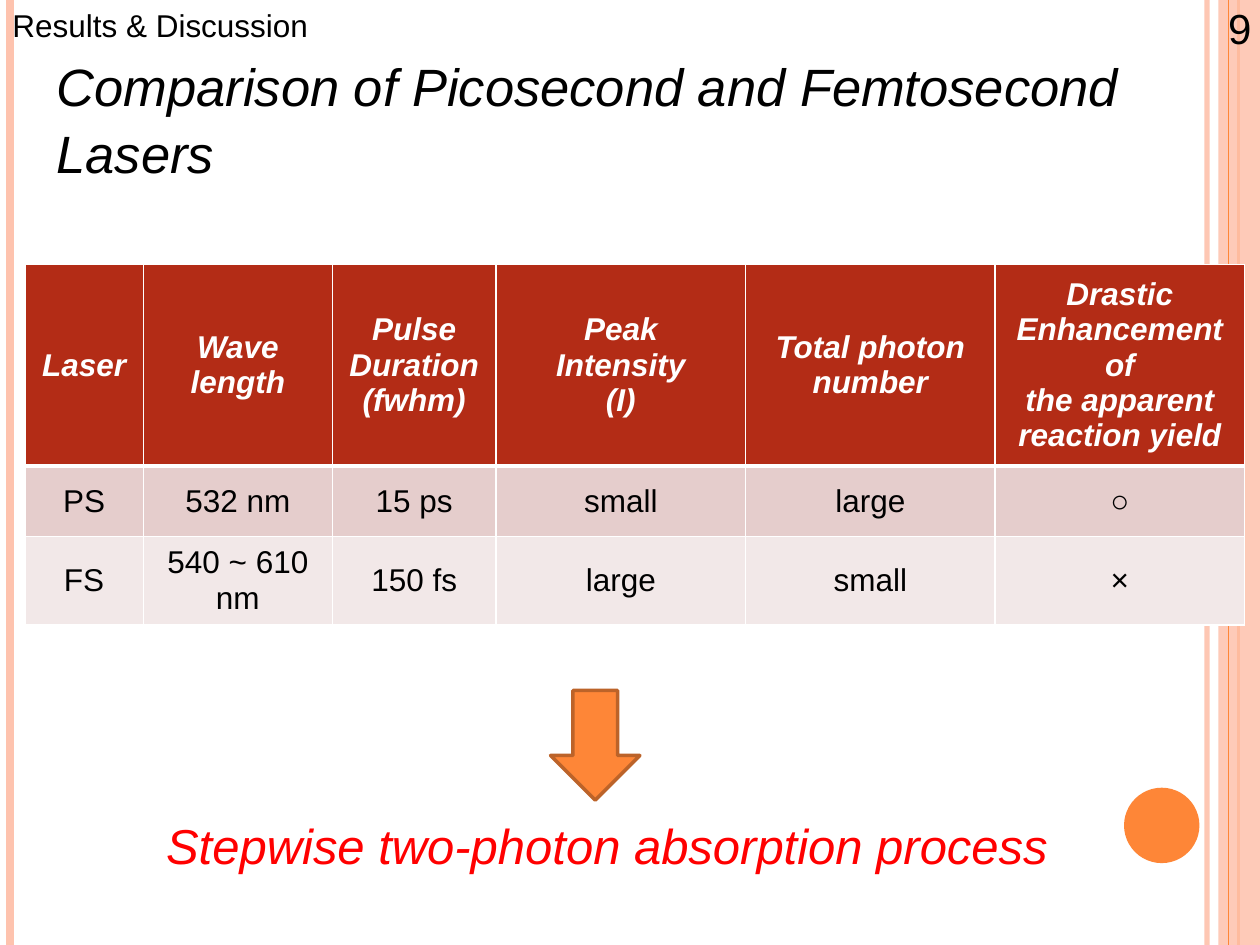
"""Build the slide comparing picosecond and femtosecond lasers."""
import pptx
import pptx.dml.color
import pptx.enum.shapes
import pptx.enum.text
import pptx.oxml
import pptx.oxml.ns
import pptx.util
from lxml import etree

Cm = pptx.util.Cm
Pt = pptx.util.Pt
SHAPES = pptx.enum.shapes.MSO_SHAPE
FONT = "Arial"
SLIDE_WIDTH, SLIDE_HEIGHT = 25.4, 19.05
COLOURS = {
    "black": "000000",
    "white": "FFFFFF",
    "red": "FF0000",
    "orange": "FE8637",
    "dark orange": "BC6329",
    "peach": "FEC3AE",
    "header": "B32C16",
    "odd row": "E5CDCC",
    "even row": "F2E8E8",
}
STRIPES = [
    (24.33, "peach", 3, 93),
    (0.2, "peach", 4.5, 100),
    (24.97, "orange", 1.5, 100),
]
COLUMN_WIDTHS = [2.39, 3.81, 3.3, 5.03, 5.03, 5.03]
ROW_HEIGHTS = [4.06, 1.42, 1.78]
ROW_FILLS = ["header", "odd row", "even row"]
LASERS = [
    ["Laser", "Wave\nlength", "Pulse\nDuration\n(fwhm)", "Peak\nIntensity\n(I)",
     "Total photon\nnumber",
     "Drastic\nEnhancement\nof\nthe apparent\nreaction yield"],
    ["PS", "532 nm", "15 ps", "small", "large", "○"],
    ["FS", "540 ~ 610 nm", "150 fs", "large", "small", "×"],
]


def rgb(name):
    return pptx.dml.color.RGBColor.from_string(COLOURS[name])


def set_alpha(element, percent):
    colour = element.find(".//" + pptx.oxml.ns.qn("a:srgbClr"))
    alpha = etree.SubElement(colour, pptx.oxml.ns.qn("a:alpha"))
    alpha.set("val", str(percent * 1000))


def format_text(text_frame, size, colour, bold=False, italic=False):
    for paragraph in text_frame.paragraphs:
        for run in paragraph.runs:
            run.font.name = FONT
            run.font.size = Pt(size)
            run.font.bold = bold
            run.font.italic = italic
            run.font.color.rgb = rgb(colour)


def add_stripe(slide, x, colour, width, opacity=100):
    connector = slide.shapes.add_connector(
        pptx.enum.shapes.MSO_CONNECTOR.STRAIGHT, Cm(x), Cm(0), Cm(x), Cm(SLIDE_HEIGHT))
    connector.line.color.rgb = rgb(colour)
    connector.line.width = Pt(width)
    properties = connector._element.spPr
    if opacity < 100:
        set_alpha(properties, opacity)
    etree.SubElement(properties, pptx.oxml.ns.qn("a:effectLst"))


def add_block(slide, preset, left, top, width, height, fill, line=None):
    shape = slide.shapes.add_shape(preset, Cm(left), Cm(top), Cm(width), Cm(height))
    shape.shadow.inherit = False
    shape.fill.solid()
    shape.fill.fore_color.rgb = rgb(fill)
    if line:
        shape.line.color.rgb = rgb(line)
        shape.line.width = Pt(2)
    else:
        shape.line.fill.background()
    return shape


def add_text(slide, text, left, top, width, height, size, colour="black",
             italic=False, spacing=None):
    text_frame = slide.shapes.add_textbox(
        Cm(left), Cm(top), Cm(width), Cm(height)).text_frame
    text_frame.word_wrap = True
    text_frame.text = text
    format_text(text_frame, size, colour, italic=italic)
    for paragraph in text_frame.paragraphs:
        paragraph.line_spacing = spacing


def set_borders(cell, **widths):
    properties = cell._tc.get_or_add_tcPr()
    for index, side in enumerate("LRTB"):
        properties.insert(index, pptx.oxml.parse_xml(
            f'<a:ln{side} {pptx.oxml.ns.nsdecls("a")} w="{Pt(widths.get(side, 1))}">'
            f'<a:solidFill><a:srgbClr val="{COLOURS["white"]}"/></a:solidFill>'
            f'</a:ln{side}>'))


def fill_cell(cell, text, fill, is_header, below_header):
    cell.text_frame.text = text
    cell.vertical_anchor = pptx.enum.text.MSO_ANCHOR.MIDDLE
    for paragraph in cell.text_frame.paragraphs:
        paragraph.alignment = pptx.enum.text.PP_ALIGN.CENTER
    format_text(cell.text_frame, 18, "white" if is_header else "black",
                bold=is_header, italic=is_header)
    cell.fill.solid()
    cell.fill.fore_color.rgb = rgb(fill)
    set_borders(cell, T=3 if below_header else 1, B=3 if is_header else 1)


def add_laser_table(slide, left, top):
    table = slide.shapes.add_table(
        len(ROW_HEIGHTS), len(COLUMN_WIDTHS), Cm(left), Cm(top),
        Cm(sum(COLUMN_WIDTHS)), Cm(sum(ROW_HEIGHTS))).table
    for column, width in zip(table.columns, COLUMN_WIDTHS):
        column.width = Cm(width)
    for index, (row, height) in enumerate(zip(table.rows, ROW_HEIGHTS)):
        row.height = Cm(height)
        for cell, text in zip(row.cells, LASERS[index]):
            fill_cell(cell, text, ROW_FILLS[index], index == 0, index == 1)


def add_decoration(slide):
    for stripe in STRIPES:
        add_stripe(slide, *stripe)
    band_left = 24.56
    band = add_block(slide, SHAPES.RECTANGLE, band_left, 0,
                     SLIDE_WIDTH - band_left, SLIDE_HEIGHT, "peach")
    set_alpha(band._element.spPr, 87)
    add_stripe(slide, 24.77, "orange", 0.75)
    add_block(slide, SHAPES.OVAL, 22.66, 15.88, 1.52, 1.52, "orange")


def main():
    presentation = pptx.Presentation()
    presentation.slide_width = Cm(SLIDE_WIDTH)
    presentation.slide_height = Cm(SLIDE_HEIGHT)
    slide = presentation.slides.add_slide(presentation.slide_layouts[6])
    add_decoration(slide)
    add_text(slide, "Comparison of Picosecond and Femtosecond\nLasers",
             0.89, 0.91, 22.4, 2.82, 30, italic=True, spacing=1.05)
    add_laser_table(slide, 0.5, 5.33)
    add_text(slide, "Results & Discussion", 0, 0, 6.53, 1.02, 18)
    add_text(slide, "9", 24.51, -0.08, 0.99, 1.27, 24)
    add_text(slide, "Stepwise two-photon absorption process",
             3.1, 16.31, 18.8, 1.45, 28, "red", italic=True)
    add_block(slide, SHAPES.DOWN_ARROW, 11.1, 13.92, 1.8, 2.21, "orange", "dark orange")
    presentation.save("out.pptx")


if __name__ == "__main__":
    main()
